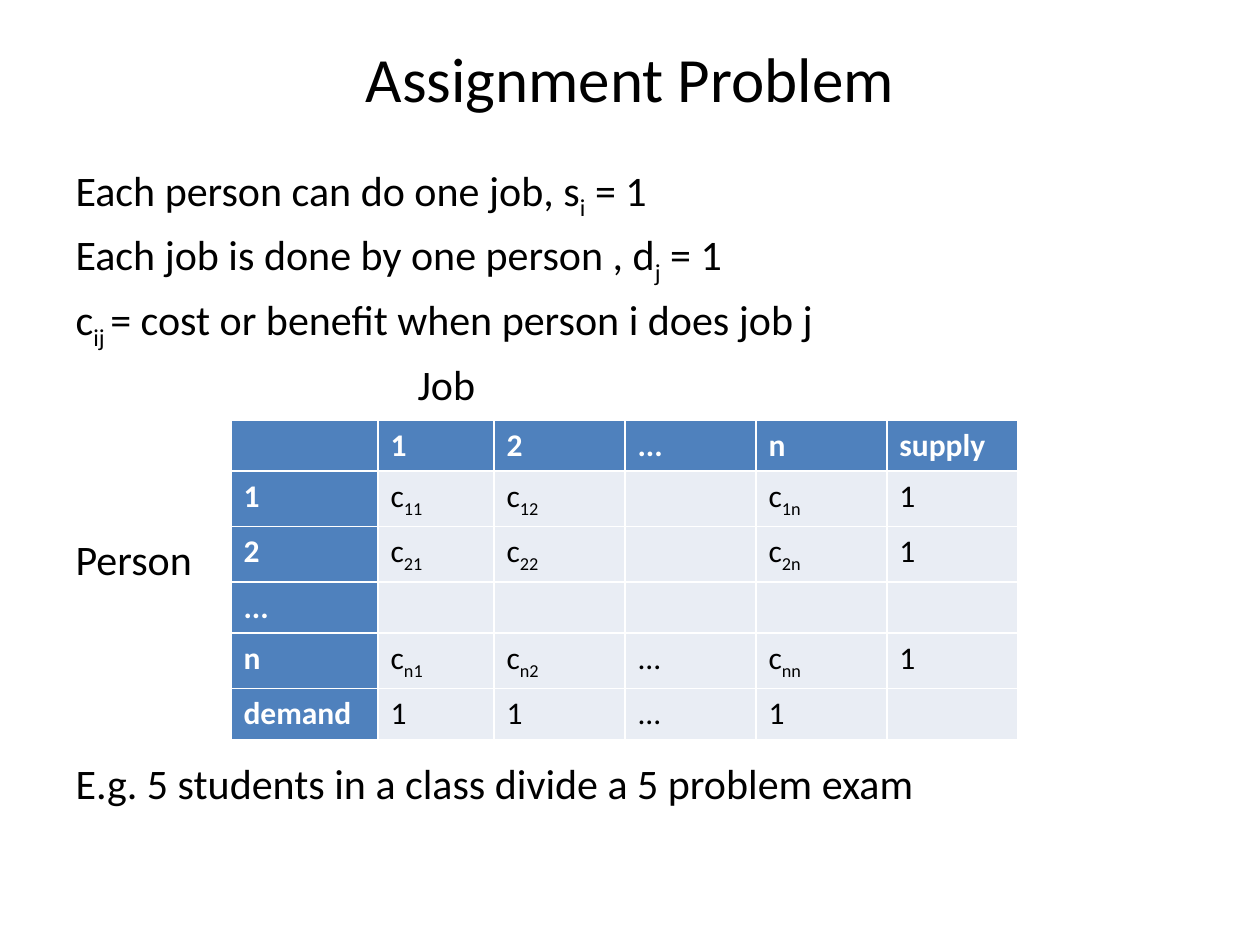
from dataclasses import dataclass

from lxml.etree import SubElement
from pptx import Presentation
from pptx.dml.color import RGBColor
from pptx.enum.text import MSO_ANCHOR, MSO_AUTO_SIZE, PP_ALIGN
from pptx.oxml.ns import qn
from pptx.util import Emu, Pt

BLACK, WHITE, BLUE, PALE = "000000", "FFFFFF", "4F81BD", "E9EDF4"


@dataclass(frozen=True)
class Line:
    text: str
    before: float = 4.2
    left: int = 0


LINES = [
    Line("Each person can do one job, s_i_ = 1"),
    Line("Each job is done by one person , d_j_ = 1"),
    Line("c_ij _= cost or benefit when person i does job j"),
    Line("Job", left=342),
    Line("Person", before=71.3),
    Line("E.g. 5 students in a class divide a 5 problem exam", before=99.3),
]
COLS = [147, 116, 131, 131, 131, 131]
ROW = 51
CELLS = [
    ["", "1", "2", "...", "n", "supply"],
    ["1", "c_11_", "c_12_", "", "c_1n_", "1"],
    ["2", "c_21_", "c_22_", "", "c_2n_", "1"],
    ["...", "", "", "", "", ""],
    ["n", "c_n1_", "c_n2_", "...", "c_nn_", "1"],
    ["demand", "1", "1", "...", "1", ""],
]


def px(num: int) -> Emu:
    return Emu(round(num * 914400 / 126))


def tint(code: str) -> RGBColor:
    return RGBColor.from_string(code)


def write(para, text: str, *, size: int, color: str = BLACK,
          bold: bool = False, align=None) -> None:
    """Fill a paragraph; parts between underscores become subscripts."""
    para.alignment = align
    for i, part in enumerate(text.split("_")):
        if not part:
            continue
        run = para.add_run()
        run.text = part
        font = run.font
        font.name, font.size, font.bold = "Calibri", Pt(size), bold
        font.color.rgb = tint(color)
        if i % 2:
            run._r.get_or_add_rPr().set("baseline", "-25000")


def place(shape, left: int, top: int, width: int, height: int) -> None:
    shape.left, shape.top = px(left), px(top)
    shape.width, shape.height = px(width), px(height)
    shape.text_frame.auto_size = MSO_AUTO_SIZE.NONE


def fill_body(frame, lines: list[Line]) -> None:
    for i, line in enumerate(lines):
        para = frame.add_paragraph() if i else frame.paragraphs[0]
        para.space_before = Pt(line.before)
        props = para._p.get_or_add_pPr()
        props.set("marL", str(px(line.left)))
        props.set("indent", "0")
        SubElement(props, qn("a:buNone"))
        write(para, line.text, size=24)


def draw_table(slide, left: int, top: int) -> None:
    frame = slide.shapes.add_table(
        len(CELLS), len(COLS), px(left), px(top),
        px(sum(COLS)), px(ROW * len(CELLS)))
    table = frame.table
    table.first_col, table.horz_banding = True, False
    for col, width in zip(table.columns, COLS):
        col.width = px(width)
    for r, row in enumerate(CELLS):
        table.rows[r].height = px(ROW)
        for c, text in enumerate(row):
            head = r == 0 or c == 0
            cell = table.cell(r, c)
            cell.fill.solid()
            cell.fill.fore_color.rgb = tint(BLUE if head else PALE)
            write(cell.text_frame.paragraphs[0], text, size=18,
                  color=WHITE if head else BLACK, bold=head)


def main() -> None:
    deck = Presentation()
    deck.slide_width, deck.slide_height = px(1260), px(945)
    slide = deck.slides.add_slide(deck.slide_layouts[1])
    title, body = slide.placeholders

    place(title, 63, 38, 1134, 78)
    title.text_frame.vertical_anchor = MSO_ANCHOR.MIDDLE
    write(title.text_frame.paragraphs[0], "Assignment Problem",
          size=36, align=PP_ALIGN.CENTER)

    place(body, 63, 158, 1134, 687)
    fill_body(body.text_frame, LINES)
    draw_table(slide, 231, 420)
    deck.save("out.pptx")


if __name__ == "__main__":
    main()
